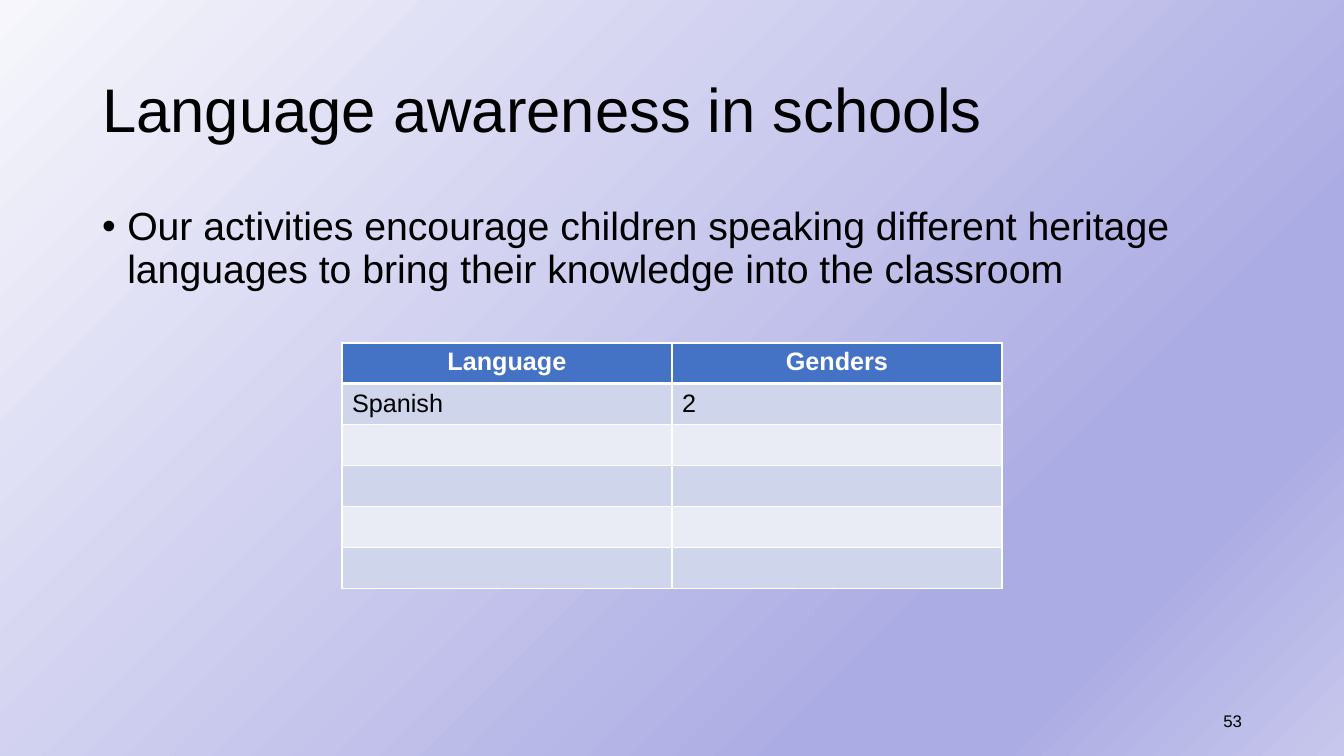
from lxml import etree
from pptx import Presentation
from pptx.dml.color import RGBColor
from pptx.enum.text import MSO_ANCHOR, MSO_AUTO_SIZE, PP_ALIGN
from pptx.oxml.ns import qn
from pptx.util import Pt

LEFT, CENTER, RIGHT = PP_ALIGN.LEFT, PP_ALIGN.CENTER, PP_ALIGN.RIGHT
MIDDLE = MSO_ANCHOR.MIDDLE
NO_AUTOFIT = MSO_AUTO_SIZE.NONE
EMU_PER_PX = 914400 / 100.8
FONT = "Arial"
COLORS = {
    "text": "000000",
    "white": "FFFFFF",
    "header": "4472C4",
    "band_dark": "CFD5EA",
    "band_light": "E9EBF5",
}
BACKGROUND_STOPS = [(0, "F6F6FC"), (74, "ACACE4"), (83, "ACACE4"), (100, "C7C7ED")]
LANGUAGES = [("Language", "Genders"), ("Spanish", "2")] + [("", "")] * 4


def px(length):
    return round(length * EMU_PER_PX)


def place(shape, left, top, width, height):
    shape.left, shape.top = px(left), px(top)
    shape.width, shape.height = px(width), px(height)


def write(frame, text, size, align=LEFT, color="text", bold=False):
    frame.text = text
    para = frame.paragraphs[0]
    para.alignment = align
    for span in para.runs:
        span.font.name = FONT
        span.font.size = Pt(size)
        span.font.bold = bold
        span.font.color.rgb = RGBColor.from_string(COLORS[color])
    return para


def add_color(parent, color):
    fill = etree.SubElement(parent, qn("a:solidFill"))
    etree.SubElement(fill, qn("a:srgbClr"), val=color)


def paint_background(slide):
    fill = slide.background.fill
    fill.gradient()
    fill.gradient_angle = 315
    stops = slide.element.find(".//" + qn("a:gsLst"))
    for stop in list(stops):
        stops.remove(stop)
    for percent, color in BACKGROUND_STOPS:
        stop = etree.SubElement(stops, qn("a:gs"), pos=str(percent * 1000))
        etree.SubElement(stop, qn("a:srgbClr"), val=color)


def add_title(slide, text):
    title = slide.shapes.title
    place(title, 92, 40, 1160, 146)
    title.text_frame.auto_size = NO_AUTOFIT
    title.text_frame.vertical_anchor = MIDDLE
    write(title.text_frame, text, 44).line_spacing = 0.9


def add_bullet(slide, text):
    body = slide.placeholders[1]
    place(body, 92, 202, 1160, 113)
    body.text_frame.auto_size = NO_AUTOFIT
    para = write(body.text_frame, text, 28)
    para.line_spacing = 0.9
    para.space_before = Pt(10)
    properties = para._p.get_or_add_pPr()
    properties.set("marL", "228600")
    properties.set("indent", "-228600")
    etree.SubElement(properties, qn("a:buFont"), typeface=FONT)
    etree.SubElement(properties, qn("a:buChar"), char="•")


def add_page_number(slide, number):
    box = slide.shapes.add_textbox(px(950), px(701), px(302), px(40))
    box.text_frame.word_wrap = True
    box.text_frame.vertical_anchor = MIDDLE
    write(box.text_frame, number, 12, RIGHT)


def set_borders(cell, bottom):
    """Draw white one-point borders, with a bottom line of the given points."""
    properties = cell._tc.get_or_add_tcPr()
    widths = [("lnL", 1), ("lnR", 1), ("lnT", 1), ("lnB", bottom)]
    for index, (side, width) in enumerate(widths):
        line = etree.Element(qn("a:" + side), w=str(Pt(width)))
        add_color(line, COLORS["white"])
        properties.insert(index, line)


def fill_cell(cell, text, row):
    header = row == 0
    band = "band_dark" if row % 2 else "band_light"
    cell.fill.solid()
    cell.fill.fore_color.rgb = RGBColor.from_string(COLORS["header" if header else band])
    set_borders(cell, 3 if header else 1)
    if header:
        write(cell.text_frame, text, 18, CENTER, "white", True)
    elif text:
        write(cell.text_frame, text, 18)
        cell.vertical_anchor = MIDDLE
        cell.margin_top = cell.margin_bottom = 0


def add_language_table(slide):
    frame = slide.shapes.add_table(len(LANGUAGES), 2, px(342), px(343), px(660), px(243))
    table = frame.table
    for column in table.columns:
        column.width = px(330)
    for index, values in enumerate(LANGUAGES):
        table.rows[index].height = px(41 if index else 38)
        for column, text in enumerate(values):
            fill_cell(table.cell(index, column), text, index)


def main():
    deck = Presentation()
    deck.slide_width, deck.slide_height = px(1344), px(756)
    slide = deck.slides.add_slide(deck.slide_layouts[1])
    paint_background(slide)
    add_title(slide, "Language awareness in schools")
    add_bullet(slide, "Our activities encourage children speaking different heritage "
                      "languages to bring their knowledge into the classroom")
    add_page_number(slide, "53")
    add_language_table(slide)
    deck.save("out.pptx")


if __name__ == "__main__":
    main()
